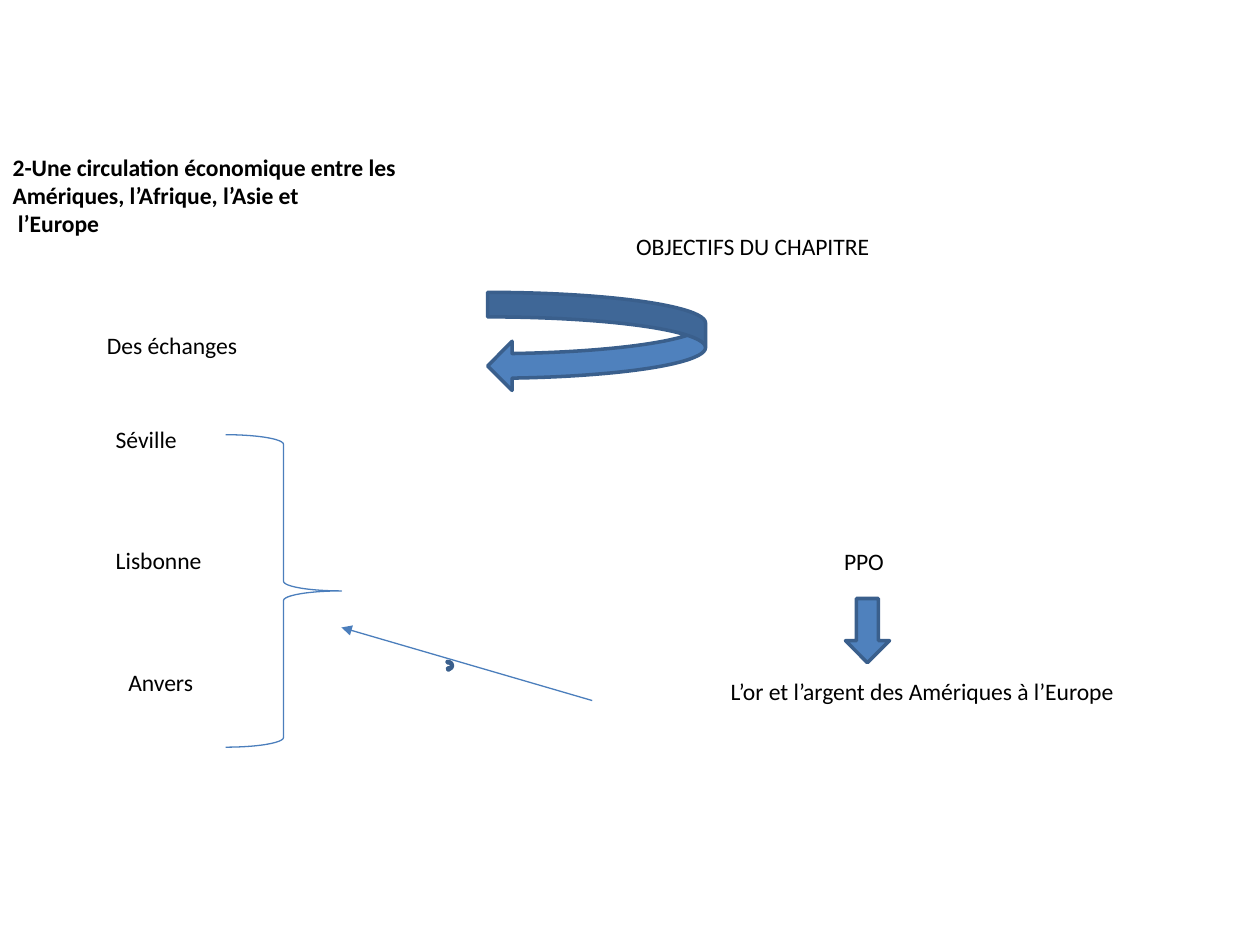
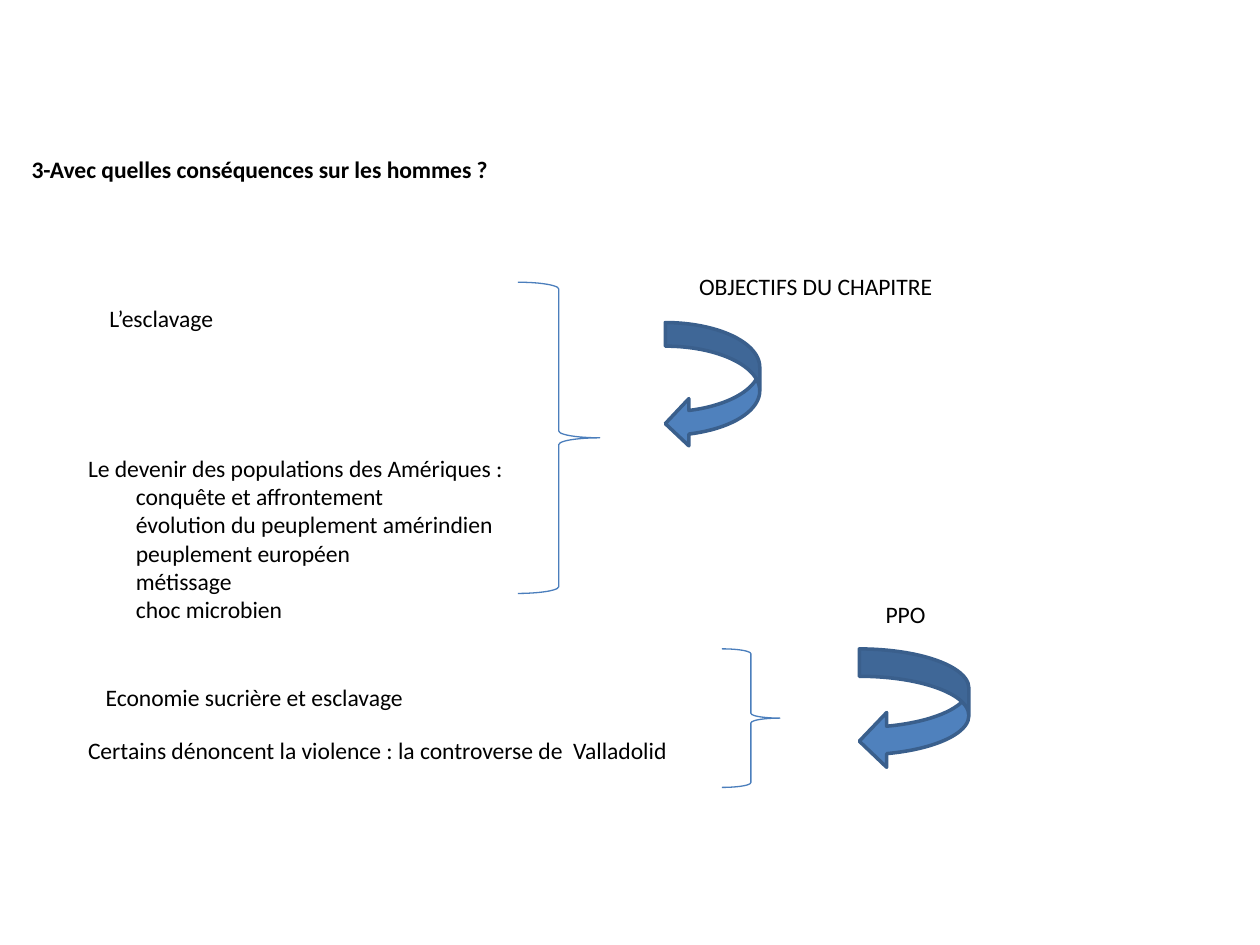
from dataclasses import dataclass

from lxml.etree import SubElement
from pptx import Presentation
from pptx.dml.color import RGBColor
from pptx.enum.shapes import MSO_CONNECTOR, MSO_SHAPE
from pptx.enum.text import MSO_ANCHOR, MSO_AUTO_SIZE, PP_ALIGN
from pptx.oxml.ns import qn
from pptx.util import Inches, Pt

COLORS = {"text": "000000", "fill": "4F81BD", "edge": "3A5F8C", "thin": "4B7EBC"}
FONT, SIZE = "Calibri", 13.5
COLUMNS, ROWS = 100, 75
CELL = Inches(0.1)
LINE_HEIGHT = 3.3
SUBLIST_INDENT = 3.8


@dataclass
class Box:
    """A rectangle measured in grid columns and rows."""
    left: float
    top: float
    width: float
    height: float = LINE_HEIGHT

    def inner(self, left, top, width, height=LINE_HEIGHT):
        """Return a box placed relative to this one."""
        return Box(self.left + left, self.top + top, width, height)

    def lengths(self):
        """Return left, top, width and height as slide lengths."""
        return [round(value * CELL) for value in (self.left, self.top, self.width, self.height)]


def color(name):
    """Return a palette colour."""
    return RGBColor.from_string(COLORS[name])


def write(shape, text, bold=False, wrap=True):
    """Fill a shape with left-aligned text in the common style."""
    frame = shape.text_frame
    frame.text = text
    frame.word_wrap = wrap
    frame.auto_size = MSO_AUTO_SIZE.NONE
    frame.vertical_anchor = MSO_ANCHOR.TOP
    for para in frame.paragraphs:
        para.alignment = PP_ALIGN.LEFT
        for span in para.runs:
            span.font.name, span.font.size, span.font.bold = FONT, Pt(SIZE), bold
            span.font.color.rgb = color("text")


def add_label(page, box, text, wrap=True):
    """Add a text box and return it."""
    label = page.shapes.add_textbox(*box.lengths())
    write(label, text, wrap=wrap)
    return label


def add_block_arrow(page, box, kind=MSO_SHAPE.CURVED_LEFT_ARROW):
    """Add a filled arrow."""
    arrow = page.shapes.add_shape(kind, *box.lengths())
    arrow.shadow.inherit = False
    arrow.fill.solid()
    arrow.fill.fore_color.rgb = color("fill")
    arrow.line.color.rgb = color("edge")
    arrow.line.width = Pt(2)


def add_brace(page, box):
    """Add a thin right brace."""
    brace = page.shapes.add_shape(MSO_SHAPE.RIGHT_BRACE, *box.lengths())
    brace.shadow.inherit = False
    brace.fill.background()
    brace.line.color.rgb = color("thin")
    brace.line.width = Pt(0.75)


def add_pointer(page, box):
    """Add a thin arrow from the lower right to the upper left of the box."""
    left, top, width, height = box.lengths()
    pointer = page.shapes.add_connector(
        MSO_CONNECTOR.STRAIGHT, left + width, top + height, left, top)
    pointer.line.color.rgb = color("thin")
    pointer.line.width = Pt(0.75)
    properties = pointer._element.spPr
    SubElement(properties.find(qn("a:ln")), qn("a:tailEnd"), type="triangle")
    SubElement(properties, qn("a:effectLst"))


def add_page(deck, box, title):
    """Add a slide with its title placed in the box."""
    page = deck.slides.add_slide(deck.slide_layouts[5])
    heading = page.shapes.title
    heading.left, heading.top, heading.width, heading.height = box.lengths()
    write(heading, title, bold=True)
    return page


def draw_goal(page, box, text, arrow, kind=MSO_SHAPE.CURVED_LEFT_ARROW):
    """Draw a goal heading with its block arrow."""
    add_label(page, box, text)
    add_block_arrow(page, box.inner(*arrow), kind)


def draw_ports(page, box):
    """Draw the braced trading ports and the arrow leading to them."""
    ports = [("Séville", 0), ("Lisbonne", 0), ("Anvers", 1)]
    for row, (port, shift) in enumerate(ports):
        add_label(page, box.inner(shift, row * 9.65, 11.2), port)
    add_block_arrow(page, box.inner(27.3, 19.3, 0.4, 0.7))
    add_brace(page, box.inner(9.7, 1.3, 9.2, box.height))
    add_pointer(page, box.inner(18.9, 16.6, 19.9, 5.8))


def draw_peoples(page, box):
    """Draw the braced topics on slavery and the American peoples."""
    add_label(page, box.inner(1.7, 1.2, 11.7), "L’esclavage")
    topics = ["Le devenir des populations des Amériques :", "conquête et affrontement",
              "évolution du peuplement amérindien", "peuplement européen",
              "métissage", "choc microbien"]
    sublist = add_label(page, box.inner(0, 13.1, 40.5, 14.6), "\n".join(topics))
    for para in sublist.text_frame.paragraphs[1:]:
        para._p.get_or_add_pPr().set("marL", str(round(SUBLIST_INDENT * CELL)))
    add_brace(page, box.inner(35.1, 0, 6.5, box.height))


def draw_sugar(page, box):
    """Draw the braced topics on sugar and the controversy."""
    add_label(page, box.inner(1.4, 2.2, 25.9), "Economie sucrière et esclavage", wrap=False)
    add_label(page, box.inner(0, 6.4, 55.8),
              "Certains dénoncent la violence : la controverse de  Valladolid")
    add_brace(page, box.inner(51.3, 0, 4.6, box.height))


def build_trade(deck):
    """Build the slide on trade between continents."""
    title = "2-Une circulation économique entre les\nAmériques, l’Afrique, l’Asie et\n l’Europe"
    page = add_page(deck, Box(0, 11.6, 43.9, 7.8), title)
    draw_goal(page, Box(49.5, 17.9, 45.2), "OBJECTIFS DU CHAPITRE", (-10.8, 5.3, 17.3, 7.8))
    add_label(page, Box(7.5, 25.8, 15.2), "Des échanges")
    draw_ports(page, Box(8.2, 33.2, 38.8, 24.8))
    draw_goal(page, Box(66, 42.9, 13.1), "PPO", (1.1, 4.6, 3.5, 5.1), MSO_SHAPE.DOWN_ARROW)
    add_label(page, Box(57, 53.2, 32.9), "L’or et l’argent des Amériques à l’Europe", wrap=False)


def build_consequences(deck):
    """Build the slide on consequences for people."""
    page = add_page(deck, Box(1.5, 11.8, 47.2), "3-Avec quelles conséquences sur les hommes ?")
    draw_goal(page, Box(54.5, 21.1, 40.5), "OBJECTIFS DU CHAPITRE", (-1.7, 4.5, 7.5, 9.9))
    draw_peoples(page, Box(6, 22.4, 41.6, 24.7))
    draw_goal(page, Box(69.3, 47.1, 13.9), "PPO", (-1.1, 4.4, 8.7, 9.5))
    draw_sugar(page, Box(6, 51.5, 55.9, 11))


def main():
    """Build and save the deck."""
    deck = Presentation()
    deck.slide_width, deck.slide_height = COLUMNS * CELL, ROWS * CELL
    build_trade(deck)
    build_consequences(deck)
    deck.save("out.pptx")


if __name__ == "__main__":
    main()
